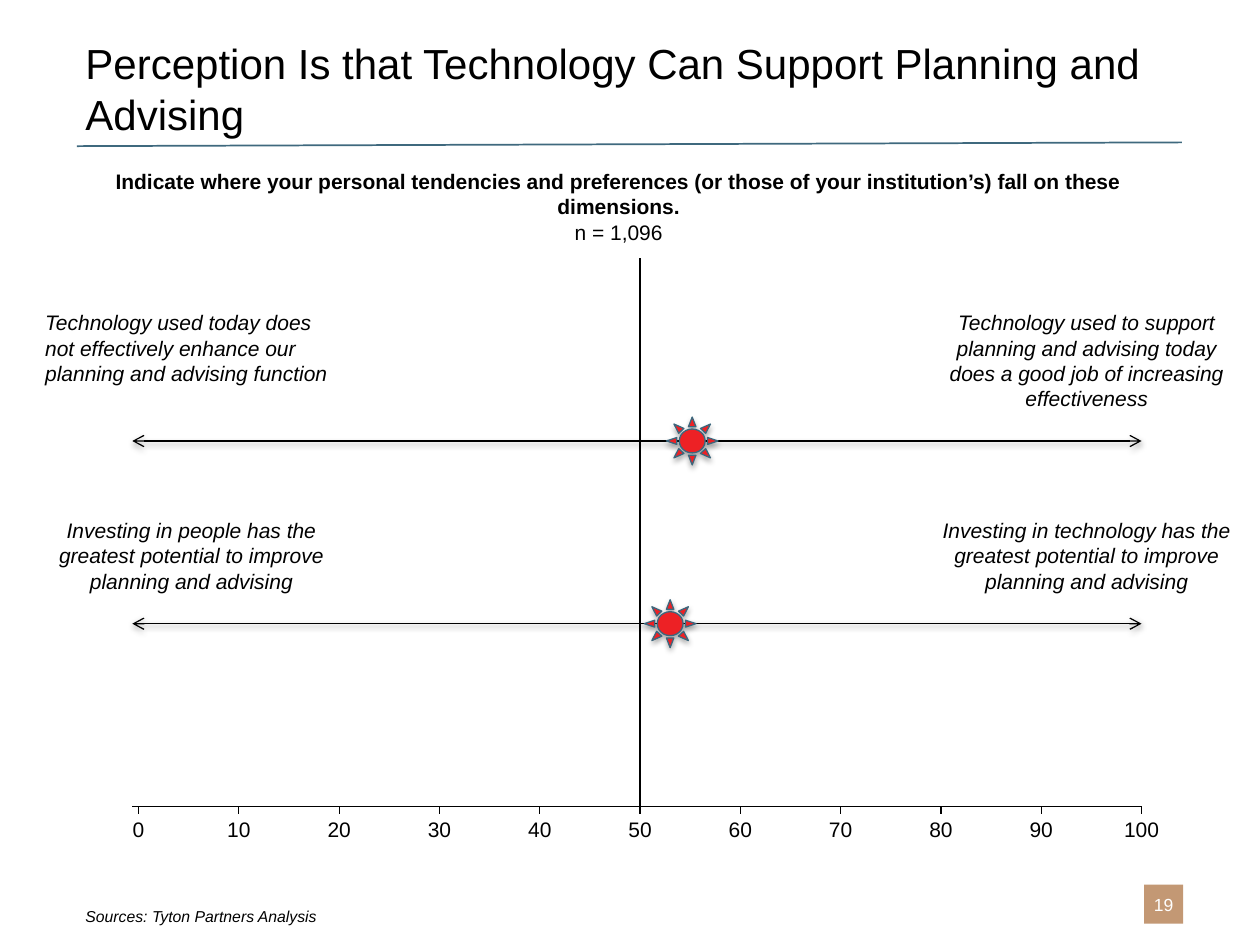
from dataclasses import dataclass

from lxml.etree import SubElement
from pptx import Presentation
from pptx.dml.color import RGBColor
from pptx.enum.shapes import MSO_CONNECTOR, MSO_SHAPE
from pptx.enum.text import MSO_ANCHOR, PP_ALIGN
from pptx.oxml.ns import qn
from pptx.util import Inches, Pt


@dataclass(frozen=True)
class Theme:
    font: str = "Arial"
    text: str = "000000"
    page_text: str = "FFFFFF"
    page_fill: str = "C39874"
    rule: str = "3F697E"
    marker: str = "ED2125"
    marker_line: str = "3C677D"
    title_size: float = 24
    body_size: float = 12
    page_size: float = 10
    source_size: float = 9
    thin: float = 0.75


AXIS_LEFT, AXIS_RIGHT, AXIS_START, AXIS_Y = 1.1, 9.06, 1.05, 6.4
MIDLINE_TOP = 2.05
TICK_LENGTH = 0.06
MARKER_WIDTH, MARKER_HEIGHT = 0.41, 0.38

# Each row: arrow height, mean answer, then the labels at both ends
# as (left, top, width, height, alignment, text).
DIMENSIONS = [
    (3.5, 55.2, [
        (0.26, 2.41, 2.55, 0.71, PP_ALIGN.LEFT,
         "Technology used today does not effectively enhance our planning and advising function"),
        (7.35, 2.41, 2.55, 0.91, PP_ALIGN.CENTER,
         "Technology used to support planning and advising today does a good job of "
         "increasing effectiveness"),
    ]),
    (4.95, 53, [
        (0.23, 4.06, 2.58, 0.71, PP_ALIGN.CENTER,
         "Investing in people has the greatest potential to improve planning and advising"),
        (7.35, 4.06, 2.55, 0.71, PP_ALIGN.CENTER,
         "Investing in technology has the greatest potential to improve planning and advising"),
    ]),
]


def axis_x(value):
    """Horizontal position in inches of a value on the 0-100 scale."""
    return AXIS_LEFT + (AXIS_RIGHT - AXIS_LEFT) * value / 100


def add_shadow(effects, distance, opacity):
    shadow = SubElement(effects, qn("a:outerShdw"), blurRad=str(Pt(3.15)),
                        dist=str(Pt(distance)), dir="5400000", rotWithShape="0")
    color = SubElement(shadow, qn("a:srgbClr"), val="000000")
    SubElement(color, qn("a:alpha"), val=str(opacity * 1000))


class SlideBuilder:
    def __init__(self, slide, theme):
        self.slide = slide
        self.theme = theme

    def style(self, paragraph, size, color=None, bold=False, italic=False,
              align=PP_ALIGN.LEFT):
        paragraph.alignment = align
        font = paragraph.font
        font.name = self.theme.font
        font.size = Pt(size)
        font.bold = bold
        font.italic = italic
        font.color.rgb = RGBColor.from_string(color or self.theme.text)

    def text(self, box, paragraphs, anchor=MSO_ANCHOR.TOP, wrap=True, margins=None):
        """Place a text box; paragraphs are (text, style options) pairs."""
        shape = self.slide.shapes.add_textbox(*map(Inches, box))
        frame = shape.text_frame
        frame.word_wrap = wrap
        frame.vertical_anchor = anchor
        if margins is not None:
            frame.margin_left = frame.margin_right = Inches(margins)
            frame.margin_top = frame.margin_bottom = 0
        for index, (content, options) in enumerate(paragraphs):
            paragraph = frame.add_paragraph() if index else frame.paragraphs[0]
            paragraph.text = content
            self.style(paragraph, **options)

    def line(self, start, end, color=None, width=None):
        connector = self.slide.shapes.add_connector(
            MSO_CONNECTOR.STRAIGHT, *map(Inches, (*start, *end)))
        connector.line.color.rgb = RGBColor.from_string(color or self.theme.text)
        connector.line.width = Pt(width or self.theme.thin)
        effects = SubElement(connector._element.spPr, qn("a:effectLst"))
        return connector, effects

    def double_arrow(self, start, end):
        connector, effects = self.line(start, end)
        outline = connector._element.spPr.find(qn("a:ln"))
        for tag in ("a:headEnd", "a:tailEnd"):
            SubElement(outline, qn(tag), type="arrow")
        add_shadow(effects, 1.57, 38)

    def shape(self, kind, box, fill):
        shape = self.slide.shapes.add_shape(kind, *map(Inches, box))
        shape.shadow.inherit = False
        shape.fill.solid()
        shape.fill.fore_color.rgb = RGBColor.from_string(fill)
        shape.line.fill.background()
        return shape

    def sun_marker(self, x, y):
        box = (x - MARKER_WIDTH / 2, y - MARKER_HEIGHT / 2, MARKER_WIDTH, MARKER_HEIGHT)
        sun = self.shape(MSO_SHAPE.SUN, box, self.theme.marker)
        sun.line.color.rgb = RGBColor.from_string(self.theme.marker_line)
        sun.line.width = Pt(self.theme.thin)
        add_shadow(sun._element.spPr.find(qn("a:effectLst")), 1.81, 35)

    def page_number(self, number):
        badge = self.shape(MSO_SHAPE.RECTANGLE, (9.08, 7.02, 0.31, 0.31),
                           self.theme.page_fill)
        frame = badge.text_frame
        frame.margin_left = frame.margin_right = 0
        frame.margin_top = frame.margin_bottom = 0
        frame.vertical_anchor = MSO_ANCHOR.MIDDLE
        frame.text = str(number)
        self.style(frame.paragraphs[0], self.theme.page_size,
                   color=self.theme.page_text, align=PP_ALIGN.CENTER)

    def axis(self):
        self.line((axis_x(50), MIDLINE_TOP), (axis_x(50), AXIS_Y))
        self.line((AXIS_START, AXIS_Y), (AXIS_RIGHT, AXIS_Y))
        label_style = {"size": self.theme.body_size, "align": PP_ALIGN.CENTER}
        label_width = 0.34
        for value in range(0, 101, 10):
            x = axis_x(value)
            self.line((x, AXIS_Y), (x, AXIS_Y + TICK_LENGTH))
            self.text((x - label_width / 2, 6.48, label_width, 0.2),
                      [(str(value), label_style)], wrap=False, margins=0.02)

    def dimension(self, y, value, labels):
        for *box, align, content in labels:
            self.text(box, [(content, {"size": self.theme.body_size, "italic": True,
                                       "align": align})])
        self.double_arrow((AXIS_START, y), (AXIS_RIGHT, y))
        self.sun_marker(axis_x(value), y)


def main():
    presentation = Presentation()
    presentation.slide_width = Inches(10)
    presentation.slide_height = Inches(7.5)
    slide = presentation.slides.add_slide(presentation.slide_layouts[6])
    theme = Theme()
    builder = SlideBuilder(slide, theme)

    builder.line((0.61, 1.16), (9.38, 1.13), theme.rule, 1)
    builder.text((0.58, 0.11, 8.82, 1.04),
                 [("Perception Is that Technology Can Support Planning and Advising",
                   {"size": theme.title_size})], anchor=MSO_ANCHOR.BOTTOM)
    question_style = {"size": theme.body_size, "align": PP_ALIGN.CENTER}
    builder.text((0.45, 1.29, 8.92, 0.71), [
        ("Indicate where your personal tendencies and preferences (or those of your "
         "institution’s) fall on these dimensions.", {**question_style, "bold": True}),
        ("n = 1,096", question_style),
    ])
    builder.axis()
    for dimension in DIMENSIONS:
        builder.dimension(*dimension)
    builder.text((0.58, 6.7, 6.88, 0.7),
                 [("Sources: Tyton Partners Analysis",
                   {"size": theme.source_size, "italic": True})], anchor=MSO_ANCHOR.BOTTOM)
    builder.page_number(19)

    presentation.save("out.pptx")


if __name__ == "__main__":
    main()
